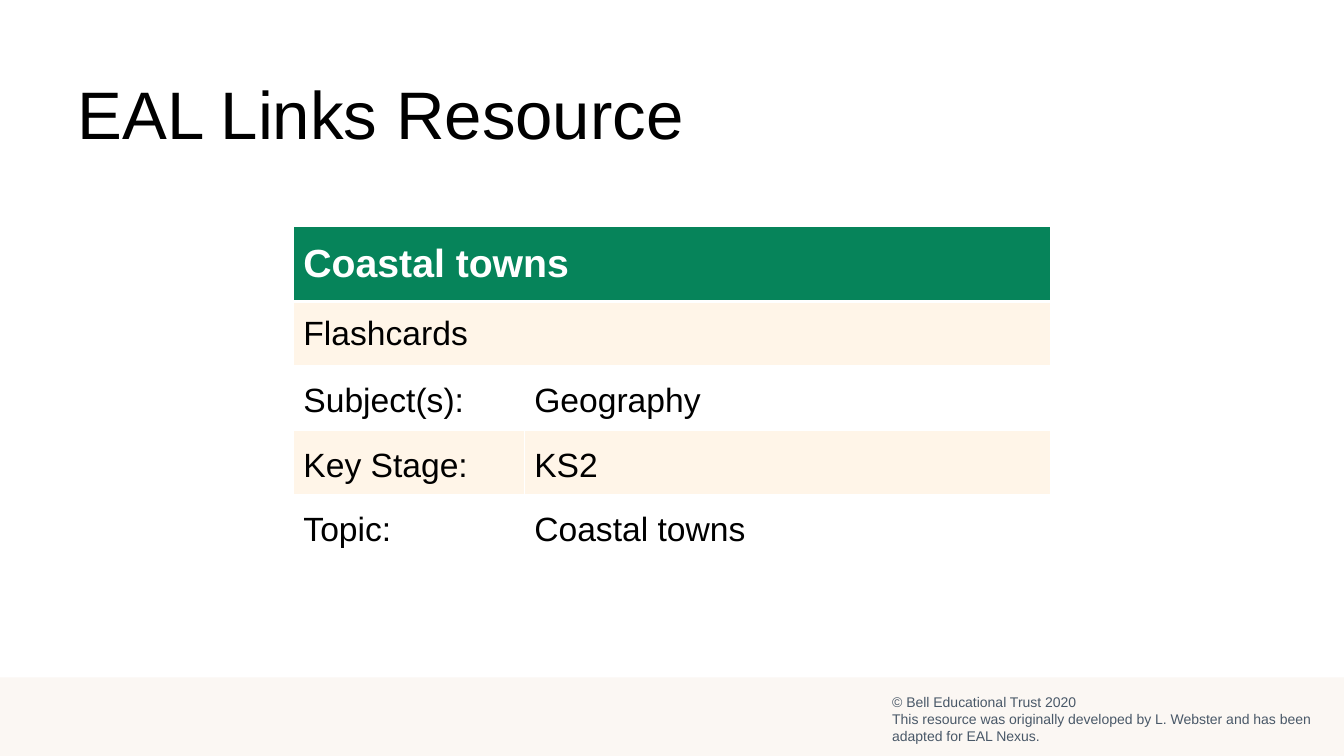
from lxml.etree import SubElement
from pptx import Presentation
from pptx.dml.color import RGBColor
from pptx.enum.shapes import MSO_SHAPE
from pptx.enum.text import MSO_ANCHOR, PP_ALIGN
from pptx.oxml import parse_xml
from pptx.oxml.ns import nsdecls, qn
from pptx.util import Inches, Pt

# Content
TITLE = "EAL Links Resource"
ROWS = [
    ("Coastal towns",),
    ("Flashcards",),
    ("Subject(s):", "Geography"),
    ("Key Stage:", "KS2"),
    ("Topic:", "Coastal towns"),
]
CREDIT = [
    "© Bell Educational Trust 2020",
    "This resource was originally developed by L. Webster and has been "
    "adapted for EAL Nexus.",
]

FONT = "Arial"
BLACK = RGBColor(0x00, 0x00, 0x00)
WHITE = RGBColor(0xFF, 0xFF, 0xFF)
GREEN = RGBColor(0x06, 0x84, 0x5A)
CREAM = RGBColor(0xFF, 0xF5, 0xE8)
SAND = RGBColor(0xFB, 0xF7, 0xF3)
SLATE = RGBColor(0x49, 0x58, 0x68)

WIDTHS = [2.29, 5.22]
HEAD, ROW = 0.74, 0.64


def style(para, size, color, bold=False):
    font = para.font
    font.name, font.size, font.bold = FONT, Pt(size), bold
    font.color.rgb = color


def border(cell, top, bottom):
    """Draw white cell edges; top and bottom widths are in points."""
    props = cell._tc.get_or_add_tcPr()
    edges = [("lnL", 1), ("lnR", 1), ("lnT", top), ("lnB", bottom)]
    for spot, (tag, width) in enumerate(edges):
        line = parse_xml(f'<a:{tag} {nsdecls("a")} w="{Pt(width)}"/>')
        fill = SubElement(line, qn("a:solidFill"))
        SubElement(fill, qn("a:srgbClr"), val=str(WHITE))
        props.insert(spot, line)


prs = Presentation()
prs.slide_width, prs.slide_height = Inches(13.33), Inches(7.5)
slide = prs.slides.add_slide(prs.slide_layouts[5])
shapes = slide.shapes

# Title
title = shapes.title
title.left, title.top = Inches(0.67), Inches(0.67)
title.width, title.height = Inches(8), Inches(0.91)
title.text_frame.text = TITLE
title.text_frame.vertical_anchor = MSO_ANCHOR.TOP
para = title.text_frame.paragraphs[0]
para.alignment = PP_ALIGN.LEFT
style(para, 48, BLACK)

# Resource table
height = HEAD + ROW * (len(ROWS) - 1)
table = shapes.add_table(len(ROWS), len(WIDTHS), Inches(2.91), Inches(2.25),
                         Inches(sum(WIDTHS)), Inches(height)).table
table.first_row = table.horz_banding = False
for col, width in zip(table.columns, WIDTHS):
    col.width = Inches(width)
for r, texts in enumerate(ROWS):
    table.rows[r].height = Inches(ROW if r else HEAD)
    wide = len(texts) == 1
    if wide:
        table.cell(r, 0).merge(table.cell(r, 1))
    for c in range(len(WIDTHS)):
        cell = table.cell(r, c)
        cell.fill.solid()
        cell.fill.fore_color.rgb = (CREAM if r % 2 else WHITE) if r else GREEN
        border(cell, 3 if r == 1 else 1, 1 if r else 3)
        cell.vertical_anchor = MSO_ANCHOR.MIDDLE
        if c >= len(texts):
            continue
        cell.text = texts[c]
        para = cell.text_frame.paragraphs[0]
        if not wide:
            para.line_spacing, para.space_after = 1.15, Pt(10)
        if r:
            style(para, 24, BLACK)
        else:
            style(para, 28, WHITE, bold=True)

# Footer band
band = shapes.add_shape(MSO_SHAPE.RECTANGLE, 0, Inches(6.72),
                        prs.slide_width, Inches(0.78))
band.shadow.inherit = False
band.fill.solid()
band.fill.fore_color.rgb = SAND
band.line.fill.background()

# Credit
frame = shapes.add_textbox(Inches(8.75), Inches(6.83),
                           Inches(4.51), Inches(0.61)).text_frame
frame.word_wrap = True
frame.text = "\n".join(CREDIT)
for para in frame.paragraphs:
    style(para, 10, SLATE)

prs.save("out.pptx")
